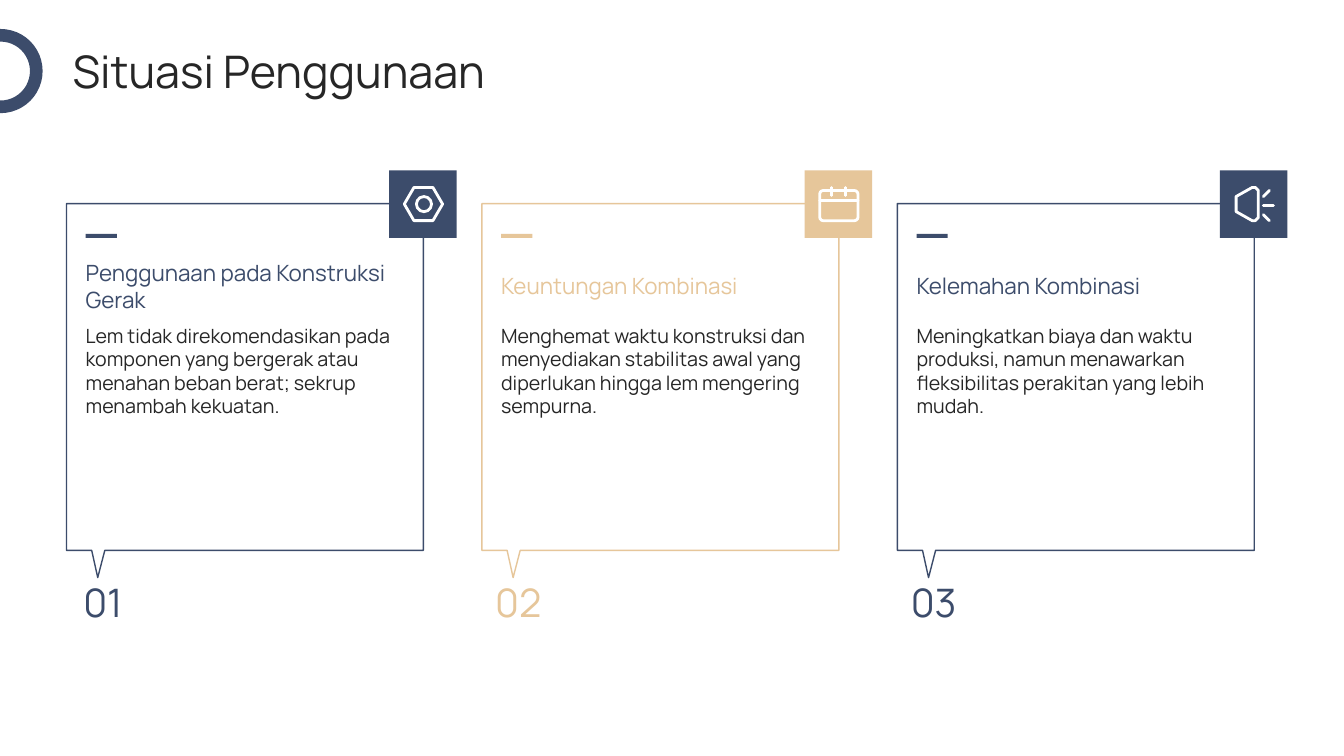
from pptx import Presentation
from pptx.dml.color import RGBColor
from pptx.enum.shapes import MSO_CONNECTOR, MSO_SHAPE
from pptx.enum.text import MSO_ANCHOR, MSO_AUTO_SIZE, PP_ALIGN
from pptx.oxml.ns import qn
from pptx.util import Inches, Pt
from lxml import etree

COLORS = {"navy": "3C4C6B", "sand": "E6C69A", "ink": "262626", "white": "FFFFFF"}


def paint(shape, fill=None, line=None, width=1):
    shape.shadow.inherit = False
    if fill:
        shape.fill.solid()
        shape.fill.fore_color.rgb = RGBColor.from_string(COLORS[fill])
    else:
        shape.fill.background()
    if line:
        shape.line.color.rgb = RGBColor.from_string(COLORS[line])
        shape.line.width = Pt(width)
    else:
        shape.line.fill.background()


def write(shape, text, size, color, align=PP_ALIGN.LEFT, anchor=MSO_ANCHOR.TOP):
    tf = shape.text_frame
    tf.word_wrap = True
    tf.auto_size = MSO_AUTO_SIZE.NONE
    tf.vertical_anchor = anchor
    tf.margin_left = tf.margin_right = tf.margin_top = tf.margin_bottom = 0
    p = tf.paragraphs[0]
    p.text = text
    p.alignment = align
    p.font.name = "Manrope"
    p.font.size = Pt(size)
    p.font.color.rgb = RGBColor.from_string(COLORS[color])


prs = Presentation()
prs.slide_width, prs.slide_height = Inches(13.33), Inches(7.5)
s = prs.slides.add_slide(prs.slide_layouts[5])
shapes = s.shapes

title = shapes.title
title.left, title.top = Inches(0.72), Inches(0.47)
title.width, title.height = Inches(11.88), Inches(0.47)
write(title, "Situasi Penggunaan", 32, "ink", anchor=MSO_ANCHOR.MIDDLE)

ring = shapes.add_shape(MSO_SHAPE.OVAL, Inches(-0.35), Inches(0.35), Inches(0.71), Inches(0.71))
paint(ring, line="navy", width=9)

cards = [
    ("Penggunaan pada Konstruksi Gerak", "navy",
     "Lem tidak direkomendasikan pada komponen yang bergerak atau menahan beban berat; "
     "sekrup menambah kekuatan."),
    ("Keuntungan Kombinasi", "sand",
     "Menghemat waktu konstruksi dan menyediakan stabilitas awal yang diperlukan hingga "
     "lem mengering sempurna."),
    ("Kelemahan Kombinasi", "navy",
     "Meningkatkan biaya dan waktu produksi, namun menawarkan fleksibilitas perakitan "
     "yang lebih mudah."),
]
callout = [(0, 2.02), (3.54, 2.02), (3.54, 5.46), (0.38, 5.46), (0.31, 5.73), (0.25, 5.46), (0, 5.46)]

for i, (heading, color, body) in enumerate(cards):
    x = 0.66 + 4.12 * i
    points = [(Inches(x + dx), Inches(y)) for dx, y in callout]
    fb = shapes.build_freeform(*points[0])
    fb.add_line_segments(points[1:])
    paint(fb.convert_to_shape(), "white", color)

    for dx, y, w, h in [(3.2, 1.69, 0.67, 0.67), (0.19, 2.32, 0.31, 0.04)]:
        block = shapes.add_shape(MSO_SHAPE.RECTANGLE, Inches(x + dx), Inches(y), Inches(w), Inches(h))
        paint(block, color)

    head = shapes.add_textbox(Inches(x + 0.19), Inches(2.48), Inches(3.15), Inches(0.71))
    write(head, heading, 16, color, anchor=MSO_ANCHOR.MIDDLE)
    text = shapes.add_textbox(Inches(x + 0.19), Inches(3.21), Inches(3.15), Inches(1.99))
    write(text, body, 14, "ink")
    number = shapes.add_textbox(Inches(x), Inches(5.74), Inches(0.72), Inches(0.52))
    write(number, f"{i + 1:02d}", 28, color, PP_ALIGN.CENTER)

icon_outlines = [
    (MSO_SHAPE.HEXAGON, 4.01, 1.86, 0.38, 0.33, 0.29),
    (MSO_SHAPE.OVAL, 4.13, 1.95, 0.15, 0.15, None),
    (MSO_SHAPE.ROUNDED_RECTANGLE, 8.13, 1.89, 0.38, 0.3, 0.12),
]
for kind, x, y, w, h, adjustment in icon_outlines:
    outline = shapes.add_shape(kind, Inches(x), Inches(y), Inches(w), Inches(h))
    if adjustment:
        outline.adjustments[0] = adjustment
    paint(outline, line="white", width=2)

horn = [(12.26, 1.95), (12.42, 1.86), (12.45, 1.86), (12.48, 1.89), (12.48, 2.16),
        (12.45, 2.19), (12.42, 2.19), (12.26, 2.1)]
points = [(Inches(x), Inches(y)) for x, y in horn]
fb = shapes.build_freeform(*points[0])
fb.add_line_segments(points[1:])
paint(fb.convert_to_shape(), line="white", width=2)

icon_strokes = [
    (8.13, 1.99, 8.51, 1.99), (8.25, 1.86, 8.25, 1.94), (8.39, 1.86, 8.39, 1.94),
    (12.53, 1.95, 12.59, 1.89), (12.53, 2.04, 12.63, 2.04), (12.53, 2.13, 12.59, 2.19),
]
for x1, y1, x2, y2 in icon_strokes:
    stroke = shapes.add_connector(MSO_CONNECTOR.STRAIGHT, Inches(x1), Inches(y1), Inches(x2), Inches(y2))
    stroke.line.color.rgb = RGBColor.from_string(COLORS["white"])
    stroke.line.width = Pt(2)
    props = stroke._element.spPr
    props.find(qn("a:ln")).set("cap", "rnd")
    etree.SubElement(props, qn("a:effectLst"))

prs.save("out.pptx")
